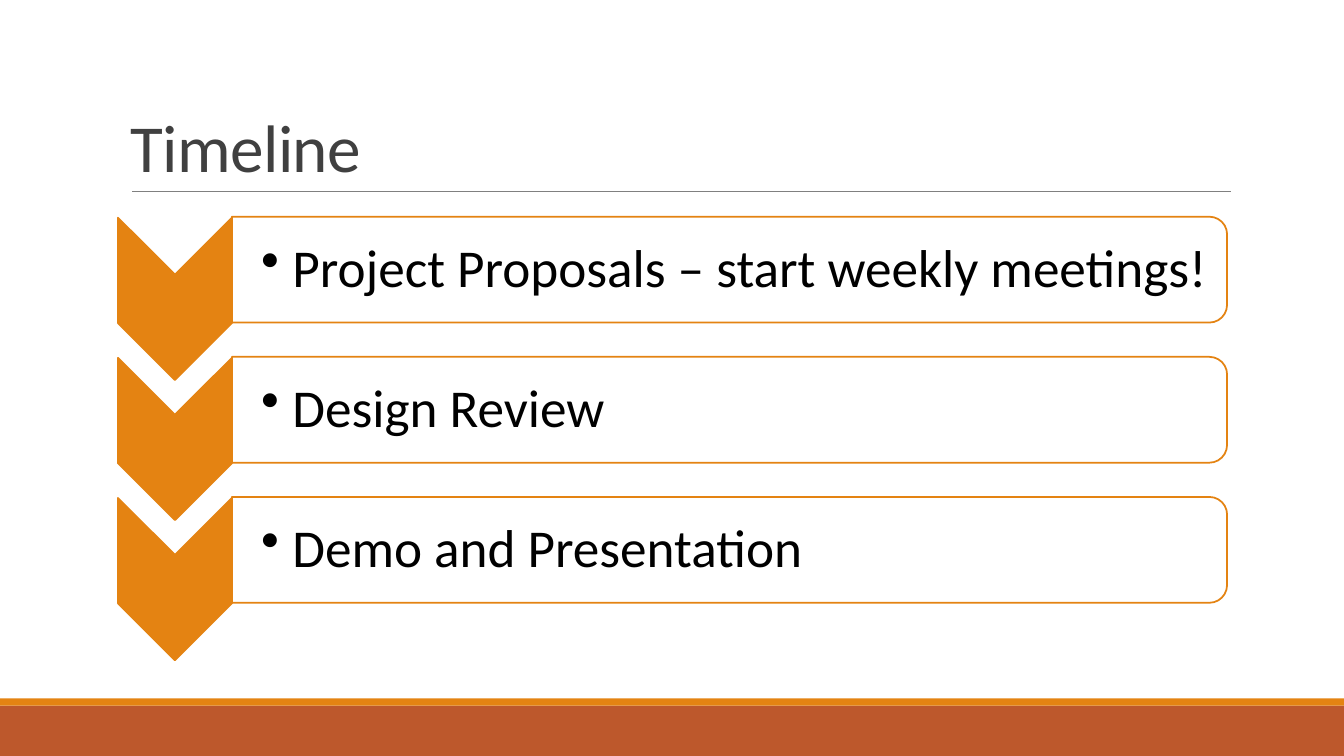
from lxml import etree
from pptx import Presentation
from pptx import util as u
from pptx.dml.color import RGBColor
from pptx.enum import shapes, text
from pptx.oxml import ns

COLORS = {"orange": "E48312", "rust": "BD582C", "rule": "808080",
          "title": "404040", "body": "000000", "panel": "FFFFFF"}
MILESTONES = ["Project Proposals – start weekly meetings!",
              "Design Review", "Demo and Presentation"]
ROW_STEP = 1.39


def color(name):
    return RGBColor.from_string(COLORS[name])


def add_box(s, kind, x, y, w, h, fill, line=None, turned=False):
    """Fill the visible box x, y, w, h, also when the shape is turned by 90 degrees."""
    if turned:
        x, y, w, h = x + (w - h) / 2, y + (h - w) / 2, h, w
    sp = s.shapes.add_shape(kind, *map(u.Inches, (x, y, w, h)))
    sp.rotation = 90 if turned else 0
    sp.shadow.inherit = False
    sp.fill.solid()
    sp.fill.fore_color.rgb = color(fill)
    if line:
        sp.line.color.rgb = color(line)
        sp.line.width = u.Pt(1.25)
    else:
        sp.line.fill.background()
    return sp


def add_text(s, content, x, y, w, h, size, fill, anchor, margins,
             line_spacing, tracking=None, bullet_indent=None):
    sp = s.shapes.add_textbox(*map(u.Inches, (x, y, w, h)))
    tf = sp.text_frame
    tf.word_wrap = True
    tf.vertical_anchor = anchor
    tf.margin_left, tf.margin_top, tf.margin_right, tf.margin_bottom = map(u.Inches, margins)
    p = tf.paragraphs[0]
    p.line_spacing = line_spacing
    r = p.add_run()
    r.text = content
    r.font.name = "Calibri"
    r.font.size = u.Pt(size)
    r.font.color.rgb = color(fill)
    if tracking is not None:
        r.font._element.set("spc", str(int(tracking * 100)))
    if bullet_indent:
        pPr = p._p.get_or_add_pPr()
        pPr.set("marL", str(u.Inches(bullet_indent)))
        pPr.set("indent", str(u.Inches(-bullet_indent)))
        etree.SubElement(pPr, ns.qn("a:buChar")).set("char", "•")


def add_footer_bands(s, x, y, w, h):
    strip = 0.07
    add_box(s, shapes.MSO_SHAPE.RECTANGLE, x, y + strip, w, h - strip, "rust")
    add_box(s, shapes.MSO_SHAPE.RECTANGLE, x, y, w, strip, "orange")


def add_title(s, x, y, w, h):
    # Rule below the heading
    rule = s.shapes.add_connector(shapes.MSO_CONNECTOR.STRAIGHT,
                                  *map(u.Inches, (x + 0.11, y + h, x + w + 0.01, y + h)))
    rule.line.color.rgb = color("rule")
    rule.line.width = u.Pt(0.5)
    etree.SubElement(rule._element.spPr, ns.qn("a:effectLst"))
    # Heading
    add_text(s, "Timeline", x, y, w, h, size=48, fill="title",
             anchor=text.MSO_ANCHOR.BOTTOM, margins=(0.1, 0.05, 0.1, 0.05),
             line_spacing=0.85, tracking=-0.5)


def add_milestone(s, label, x, y, w):
    chevron_w, panel_h = 1.13, 1.05
    panel_w = w - chevron_w
    # Downward chevron
    add_box(s, shapes.MSO_SHAPE.CHEVRON, x, y + 0.01, chevron_w, 1.61,
            "orange", line="orange", turned=True)
    # Panel rounded on its right side
    panel = add_box(s, shapes.MSO_SHAPE.ROUND_2_SAME_RECTANGLE, x + chevron_w, y,
                    panel_w, panel_h, "panel", line="orange", turned=True)
    fill = panel.fill._xPr.find(ns.qn("a:solidFill"))
    etree.SubElement(fill[0], ns.qn("a:alpha")).set("val", "90000")
    # Label
    add_text(s, label, x + chevron_w - 0.01, y + 0.06, panel_w - 0.05, 0.94,
             size=38, fill="body", anchor=text.MSO_ANCHOR.MIDDLE,
             margins=(0.3, 0.03, 0.03, 0.03), line_spacing=0.9, bullet_indent=0.31)


def add_timeline(s, x, y, w):
    for i, label in enumerate(MILESTONES):
        add_milestone(s, label, x, y + i * ROW_STEP, w)


def main():
    prs = Presentation()
    prs.slide_width, prs.slide_height = u.Inches(13.33), u.Inches(7.5)
    s = prs.slides.add_slide(prs.slide_layouts[6])
    add_footer_bands(s, 0, 6.93, 13.33, 0.57)
    add_title(s, 1.2, 0.31, 11, 1.59)
    add_timeline(s, 1.17, 2.15, 11)
    prs.save("out.pptx")


if __name__ == "__main__":
    main()
